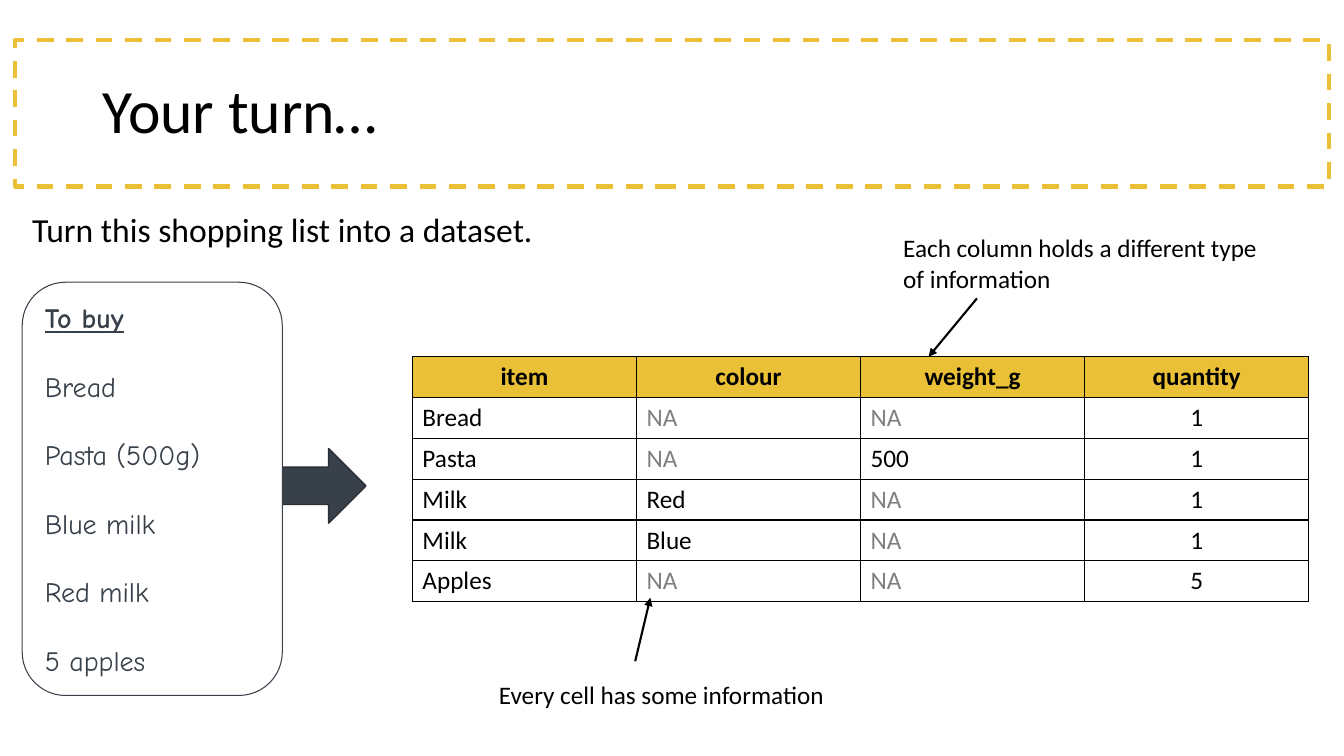
from lxml import etree
from pptx import Presentation
from pptx.dml.color import RGBColor
from pptx.enum.dml import MSO_LINE
from pptx.enum.shapes import MSO_CONNECTOR, MSO_SHAPE
from pptx.enum.text import MSO_ANCHOR, PP_ALIGN
from pptx.oxml.ns import qn
from pptx.util import Inches, Pt

RECT = MSO_SHAPE.RECTANGLE
ROUNDED = MSO_SHAPE.ROUNDED_RECTANGLE
RIGHT_ARROW = MSO_SHAPE.RIGHT_ARROW
STRAIGHT = MSO_CONNECTOR.STRAIGHT
DASH = MSO_LINE.DASH
TOP, MIDDLE = MSO_ANCHOR.TOP, MSO_ANCHOR.MIDDLE
LEFT, CENTER = PP_ALIGN.LEFT, PP_ALIGN.CENTER

BLACK, WHITE, GREY = "000000", "FFFFFF", "808080"
YELLOW, SLATE, DARK_SLATE = "EAC036", "384049", "292F36"

HEADERS = ["item", "colour", "weight_g", "quantity"]
DATASET = [
    ["Bread", "NA", "NA", "1"],
    ["Pasta", "NA", "500", "1"],
    ["Milk", "Red", "NA", "1"],
    ["Milk", "Blue", "NA", "1"],
    ["Apples", "NA", "NA", "5"],
]
SHOPPING_LIST = ["To buy", "Bread", "Pasta (500g)", "Blue milk", "Red milk", "5 apples"]


def rgb(value):
    return RGBColor.from_string(value)


def write(p, text, size=18, font="Calibri", color=BLACK, bold=False,
          underline=False, align=LEFT, before=0, spacing=1.0):
    p.alignment = align
    p.space_before = Pt(before)
    p.line_spacing = spacing
    r = p.add_run()
    r.text = text
    r.font.name = font
    r.font.size = Pt(size)
    r.font.color.rgb = rgb(color)
    r.font.bold = bold
    r.font.underline = underline


class SlideBuilder:
    def __init__(self, prs):
        self.slide = prs.slides.add_slide(prs.slide_layouts[6])
        self.shapes = self.slide.shapes

    def text(self, box, text, anchor=TOP, **style):
        sp = self.shapes.add_textbox(*map(Inches, box))
        tf = sp.text_frame
        tf.word_wrap = True
        tf.vertical_anchor = anchor
        write(tf.paragraphs[0], text, **style)

    def shape(self, kind, box, line, width, fill=None, dash=None):
        sp = self.shapes.add_shape(kind, *map(Inches, box))
        sp.shadow.inherit = False
        if fill:
            sp.fill.solid()
            sp.fill.fore_color.rgb = rgb(fill)
        else:
            sp.fill.background()
        sp.line.color.rgb = rgb(line)
        sp.line.width = Pt(width)
        if dash:
            sp.line.dash_style = dash
        return sp

    def note(self, box, items):
        sp = self.shape(ROUNDED, box, SLATE, 0.75, fill=WHITE)
        tf = sp.text_frame
        tf.word_wrap = True
        tf.vertical_anchor = MIDDLE
        for i, item in enumerate(items):
            p = tf.add_paragraph() if i else tf.paragraphs[0]
            write(p, item, size=20, font="Comic Neue", color=SLATE,
                  bold=i == 0, underline=i == 0, before=25 if i else 0)

    def arrow(self, start, end):
        cx = self.shapes.add_connector(STRAIGHT, *map(Inches, start + end))
        cx.line.color.rgb = rgb(BLACK)
        cx.line.width = Pt(1.5)
        etree.SubElement(cx.line._get_or_add_ln(), qn("a:tailEnd"), type="triangle")
        etree.SubElement(cx._element.spPr, qn("a:effectLst"))

    def borders(self, cell):
        tc_pr = cell._tc.get_or_add_tcPr()
        for i, side in enumerate(("a:lnL", "a:lnR", "a:lnT", "a:lnB")):
            ln = etree.Element(qn(side), w=str(Pt(1)))
            fill = etree.SubElement(ln, qn("a:solidFill"))
            etree.SubElement(fill, qn("a:srgbClr"), val=BLACK)
            tc_pr.insert(i, ln)

    def table(self, box, headers, records):
        rows = [headers] + records
        frame = self.shapes.add_table(len(rows), len(headers), *map(Inches, box))
        table = frame.table
        table.horz_banding = False
        for r, row in enumerate(rows):
            for c, value in enumerate(row):
                header = r == 0
                centred = header or c == len(headers) - 1
                cell = table.cell(r, c)
                cell.fill.solid()
                cell.fill.fore_color.rgb = rgb(YELLOW if header else WHITE)
                self.borders(cell)
                write(cell.text_frame.paragraphs[0], value, bold=header,
                      color=GREY if value == "NA" else BLACK,
                      align=CENTER if centred else LEFT)


def main():
    prs = Presentation()
    prs.slide_width = Inches(13.33)
    prs.slide_height = Inches(7.5)
    s = SlideBuilder(prs)
    s.shape(RECT, (0.15, 0.4, 13.03, 1.45), YELLOW, 3, dash=DASH)
    s.shape(RIGHT_ARROW, (1.68, 4.45, 1.95, 0.74), DARK_SLATE, 1, fill=SLATE)
    s.text((0.92, 0.4, 11.5, 1.45), "Your turn…", anchor=MIDDLE, size=44, spacing=0.9)
    s.text((0.22, 2.02, 9.56, 0.5), "Turn this shopping list into a dataset.", size=24)
    s.table((4.09, 3.54, 8.89, 2.43), HEADERS, DATASET)
    s.text((8.86, 2.26, 3.82, 0.71), "Each column holds a different type of information")
    s.arrow((9.69, 2.96), (9.21, 3.54))
    s.text((4.85, 6.69, 4.94, 0.4), "Every cell has some information")
    s.arrow((6.3, 6.56), (6.45, 5.93))
    s.note((0.22, 2.8, 2.58, 4.1), SHOPPING_LIST)
    prs.save("out.pptx")


if __name__ == "__main__":
    main()
